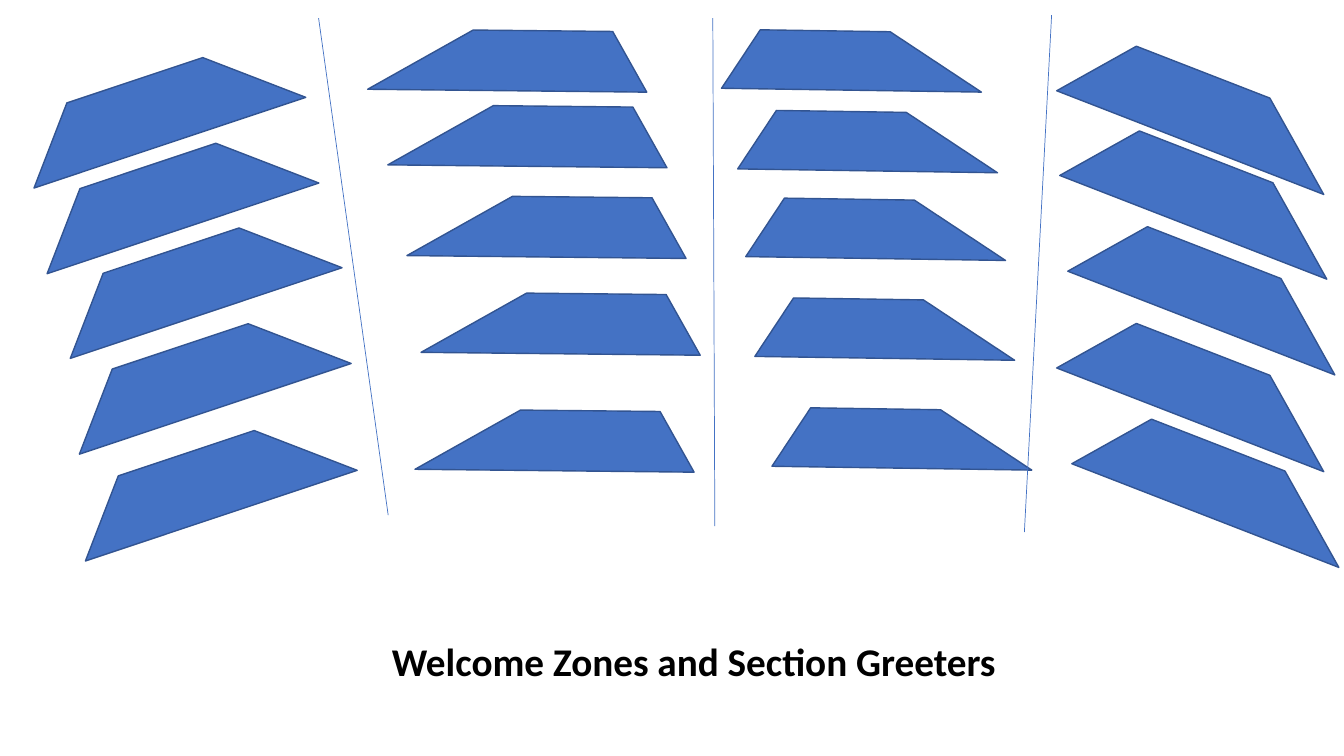
"""Build a seating plan slide with four welcome zones and their dividers."""
from dataclasses import dataclass

from lxml.etree import SubElement
from pptx import Presentation
from pptx.dml.color import RGBColor
from pptx.enum.shapes import MSO_CONNECTOR, MSO_SHAPE
from pptx.enum.text import MSO_AUTO_SIZE, PP_ALIGN
from pptx.oxml.ns import qn
from pptx.slide import Slide
from pptx.util import Inches, Pt

COLORS = {"row": "4472C4", "edge": "325491", "title": "000000"}


@dataclass
class Zone:
    width: float
    height: float
    rotation: float
    flipped: bool
    rows: list[tuple[float, float]]


@dataclass
class Divider:
    start: tuple[float, float]
    end: tuple[float, float]


ZONES = [
    Zone(1.81, 2.19, 111.1, True,
         [(0.78, 0.32), (0.91, 1.17), (1.14, 2.01), (1.23, 2.96), (1.29, 4.02)]),
    Zone(1.38, 2.4, 60.7, False,
         [(4.34, -0.3), (4.54, 0.45), (4.73, 1.35), (4.87, 2.31), (4.81, 3.47)]),
    Zone(2.17, 1.39, 33.5, False,
         [(7.36, 0.2), (7.52, 1), (7.6, 1.87), (7.69, 2.86), (7.86, 3.95)]),
    Zone(1.81, 2.19, 150.8, True,
         [(10.9, 0.32), (10.93, 1.16), (11.01, 2.11), (10.9, 3.07), (11.05, 4.02)]),
]

DIVIDERS = [
    Divider((3.16, 0.18), (3.85, 5.11)),
    Divider((7.07, 0.18), (7.09, 5.22)),
    Divider((10.43, 0.15), (10.16, 5.28)),
]


def color(name: str) -> RGBColor:
    return RGBColor.from_string(COLORS[name])


def draw_zone(page: Slide, zone: Zone) -> None:
    for left, top in zone.rows:
        row = page.shapes.add_shape(
            MSO_SHAPE.DIAGONAL_STRIPE, Inches(left), Inches(top),
            Inches(zone.width), Inches(zone.height))
        row.rotation = zone.rotation
        if zone.flipped:
            row._element.spPr.get_or_add_xfrm().set("flipV", "1")
        row.shadow.inherit = False
        row.fill.solid()
        row.fill.fore_color.rgb = color("row")
        row.line.color.rgb = color("edge")
        row.line.width = Pt(1)


def draw_divider(page: Slide, divider: Divider) -> None:
    points = [Inches(value) for value in divider.start + divider.end]
    line = page.shapes.add_connector(MSO_CONNECTOR.STRAIGHT, *points)
    line.line.color.rgb = color("row")
    line.line.width = Pt(0.5)
    SubElement(line._element.spPr, qn("a:effectLst"))


def draw_title(page: Slide, text: str) -> None:
    box = page.shapes.add_textbox(Inches(1.02), Inches(6.27), Inches(11.72), Inches(0.57))
    frame = box.text_frame
    frame.word_wrap = True
    frame.auto_size = MSO_AUTO_SIZE.SHAPE_TO_FIT_TEXT
    frame.text = text
    para = frame.paragraphs[0]
    para.alignment = PP_ALIGN.CENTER
    font = para.runs[0].font
    font.name = "Calibri"
    font.size = Pt(28)
    font.bold = True
    font.color.rgb = color("title")


def main() -> None:
    deck = Presentation()
    deck.slide_width = Inches(13.33)
    deck.slide_height = Inches(7.5)
    page = deck.slides.add_slide(deck.slide_layouts[6])
    for zone in ZONES:
        draw_zone(page, zone)
    for divider in DIVIDERS:
        draw_divider(page, divider)
    draw_title(page, "Welcome Zones and Section Greeters")
    deck.save("out.pptx")


if __name__ == "__main__":
    main()
